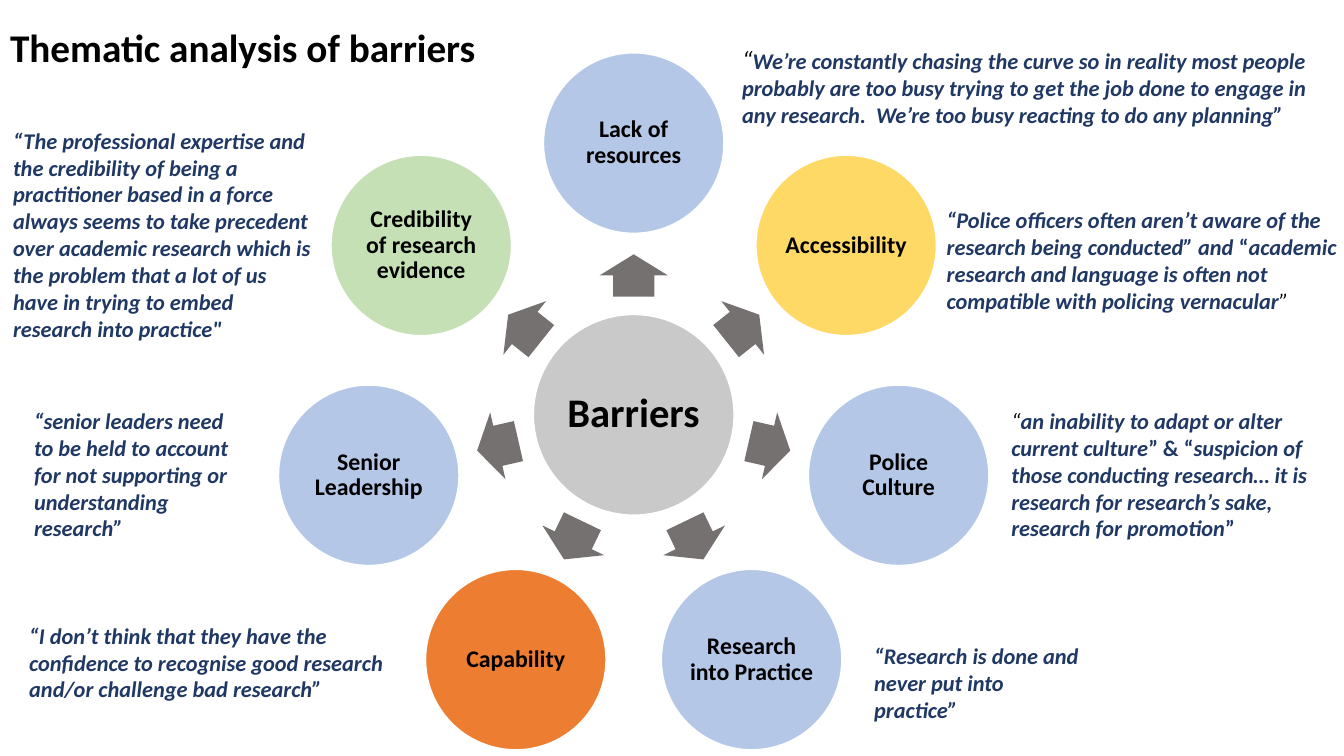
from dataclasses import dataclass
from math import cos, radians, sin

from pptx import Presentation
from pptx import util as u
from pptx.dml.color import RGBColor
from pptx.enum import shapes, text


@dataclass(frozen=True)
class Theme:
    font: str = "Calibri"
    ink: str = "000000"
    quote: str = "203864"
    hub: str = "C9C9C9"
    arrow: str = "767171"
    outline: str = "FFFFFF"
    blue: str = "B4C7E7"
    yellow: str = "FFD966"
    orange: str = "ED7D31"
    green: str = "C5E0B4"
    title_size: float = 28
    hub_size: float = 29
    barrier_size: float = 17
    quote_size: float = 16
    opening_size: float = 18


THEME = Theme()
WIDTH, HEIGHT = u.Inches(13.33), u.Inches(7.5)
COL, ROW = WIDTH / 100, HEIGHT / 100  # the slide is a grid of 100 x 100

# Wheel geometry, all lengths in columns
HUB_X, HUB_Y = 47.15 * COL, 54.87 * ROW
HUB_DIAMETER, BARRIER_DIAMETER = 14.93, 13.43
BARRIER_ORBIT, ARROW_ORBIT = 20.22, 10.37
ARROW_LENGTH, ARROW_WIDTH = 3.15, 5.1

# Clockwise from the top
BARRIERS = [
    ("Lack of resources", THEME.blue),
    ("Accessibility", THEME.yellow),
    ("Police Culture", THEME.blue),
    ("Research into Practice", THEME.blue),
    ("Capability", THEME.orange),
    ("Senior Leadership", THEME.blue),
    ("Credibility of research evidence", THEME.green),
]

# Run styles that depart from bold italic in the quote colour
UPRIGHT = {"italic": False}
PLAIN = {"bold": False, "color": THEME.ink}
OPENING = {**PLAIN, "size": THEME.opening_size}
TIGHT, ROOMY = (0.05, 0.05), (0.1, 0.05)  # side and top insets in inches

# Left, top, width, height in columns and rows; insets; runs
QUOTES = [
    ((70.07, 26.67, 30.83, 15.73), TIGHT, [
        ("“Police officers often aren’t aware of the research being conducted” and ", {}),
        ("“", UPRIGHT),
        ("academic research and language is often not compatible with policing vernacular", {}),
        ("”", PLAIN)]),
    ((74.87, 53.2, 25.13, 19.33), TIGHT, [
        ("“", PLAIN),
        ("an inability to adapt or alter current culture", {}),
        ("” & “", UPRIGHT),
        ("suspicion of those conducting research… it is research for research’s sake, "
         "research for promotion", {}),
        ("”", UPRIGHT)]),
    ((54.84, 5.2, 44.26, 12.53), TIGHT, [
        ("“", OPENING),
        ("We’re constantly chasing the curve so in reality most people probably are too busy "
         "trying to get the job done to engage in any research.  We’re too busy reacting "
         "to do any planning”", {})]),
    ((1.8, 81.6, 27.31, 12.13), TIGHT, [
        ("“I don’t think that they have the confidence to recognise good research "
         "and/or challenge bad research”", {})]),
    ((64.67, 84.27, 16.88, 12.13), TIGHT, [
        ("“Research is done and never put into practice”", {})]),
    ((1.8, 53.2, 16.88, 19.33), ROOMY, [
        ("“senior leaders need to be held to account for not supporting "
         "or understanding research”", {})]),
    ((0.23, 16.13, 23.78, 30.13), ROOMY, [
        ("“The professional expertise and the credibility of being a practitioner based in "
         "a force always seems to take precedent over academic research which is the problem "
         "that a lot of us have in trying to embed research into practice\"", {})]),
]


def grid_box(left, top, width, height):
    return [round(n) for n in (left * COL, top * ROW, width * COL, height * ROW)]


def set_insets(frame, side, top):
    frame.margin_left = frame.margin_right = u.Inches(side)
    frame.margin_top = frame.margin_bottom = u.Inches(top)


def add_run(paragraph, words, size, color=THEME.ink, bold=True, italic=False):
    run = paragraph.add_run()
    run.text = words
    run.font.name = THEME.font
    run.font.size = u.Pt(size)
    run.font.bold, run.font.italic = bold, italic
    run.font.color.rgb = RGBColor.from_string(color)


def add_wheel_part(slide, kind, angle, orbit, width, height, fill):
    """Centre a filled shape on the orbit, at an angle clockwise from the top."""
    x = HUB_X + orbit * COL * sin(radians(angle))
    y = HUB_Y - orbit * COL * cos(radians(angle))
    width, height = width * COL, height * COL
    part = slide.shapes.add_shape(
        kind, *[round(n) for n in (x - width / 2, y - height / 2, width, height)])
    part.shadow.inherit = False
    part.fill.solid()
    part.fill.fore_color.rgb = RGBColor.from_string(fill)
    return part


def add_circle(slide, label, angle, orbit, diameter, fill, size, inset):
    circle = add_wheel_part(slide, shapes.MSO_SHAPE.OVAL, angle, orbit,
                            diameter, diameter, fill)
    circle.line.color.rgb = RGBColor.from_string(THEME.outline)
    circle.line.width = u.Pt(1)
    frame = circle.text_frame
    frame.word_wrap = True
    frame.vertical_anchor = text.MSO_ANCHOR.MIDDLE
    set_insets(frame, inset, inset)
    paragraph = frame.paragraphs[0]
    paragraph.alignment = text.PP_ALIGN.CENTER
    paragraph.line_spacing = 0.9
    add_run(paragraph, label, size)


def add_arrow(slide, angle):
    arrow = add_wheel_part(slide, shapes.MSO_SHAPE.RIGHT_ARROW, angle, ARROW_ORBIT,
                           ARROW_LENGTH, ARROW_WIDTH, THEME.arrow)
    arrow.line.fill.background()
    arrow.adjustments[0], arrow.adjustments[1] = 0.6, 0.5
    arrow.rotation = (angle - 90) % 360


def add_quote(slide, box, insets, runs):
    frame = slide.shapes.add_textbox(*grid_box(*box)).text_frame
    frame.word_wrap = True
    frame.auto_size = text.MSO_AUTO_SIZE.SHAPE_TO_FIT_TEXT
    set_insets(frame, *insets)
    for words, changes in runs:
        style = {"size": THEME.quote_size, "color": THEME.quote, "italic": True, **changes}
        add_run(frame.paragraphs[0], words, **style)


def set_title(slide, words):
    title = slide.shapes.title
    title.left, title.top, title.width, title.height = grid_box(0, 0.53, 37.43, 12.13)
    frame = title.text_frame
    frame.word_wrap = True
    frame.auto_size = text.MSO_AUTO_SIZE.NONE
    frame.vertical_anchor = text.MSO_ANCHOR.MIDDLE
    paragraph = frame.paragraphs[0]
    paragraph.alignment = text.PP_ALIGN.LEFT
    paragraph.line_spacing = 0.9
    add_run(paragraph, words, THEME.title_size)


def main():
    deck = Presentation()
    deck.slide_width, deck.slide_height = WIDTH, HEIGHT
    slide = deck.slides.add_slide(deck.slide_layouts.get_by_name("Title Only"))
    set_title(slide, "Thematic analysis of barriers")

    # Hub, with an arrow out to each barrier
    add_circle(slide, "Barriers", 0, 0, HUB_DIAMETER, THEME.hub, THEME.hub_size, 0.04)
    for index, (barrier, fill) in enumerate(BARRIERS):
        angle = index * 360 / len(BARRIERS)
        add_arrow(slide, angle)
        add_circle(slide, barrier, angle, BARRIER_ORBIT, BARRIER_DIAMETER, fill,
                   THEME.barrier_size, 0.02)

    # Quotes around the wheel
    for box, insets, runs in QUOTES:
        add_quote(slide, box, insets, runs)

    deck.save("out.pptx")


if __name__ == "__main__":
    main()
